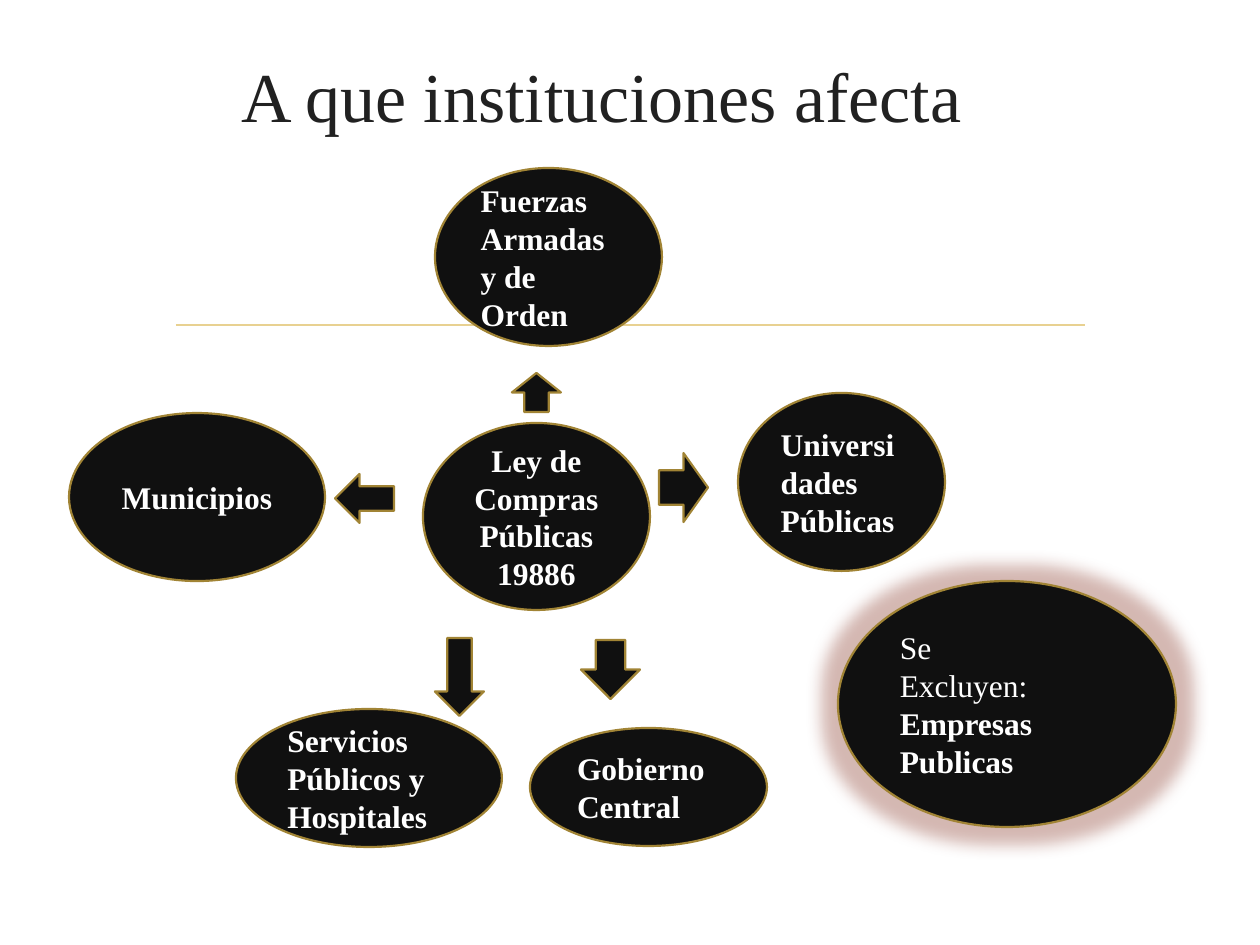
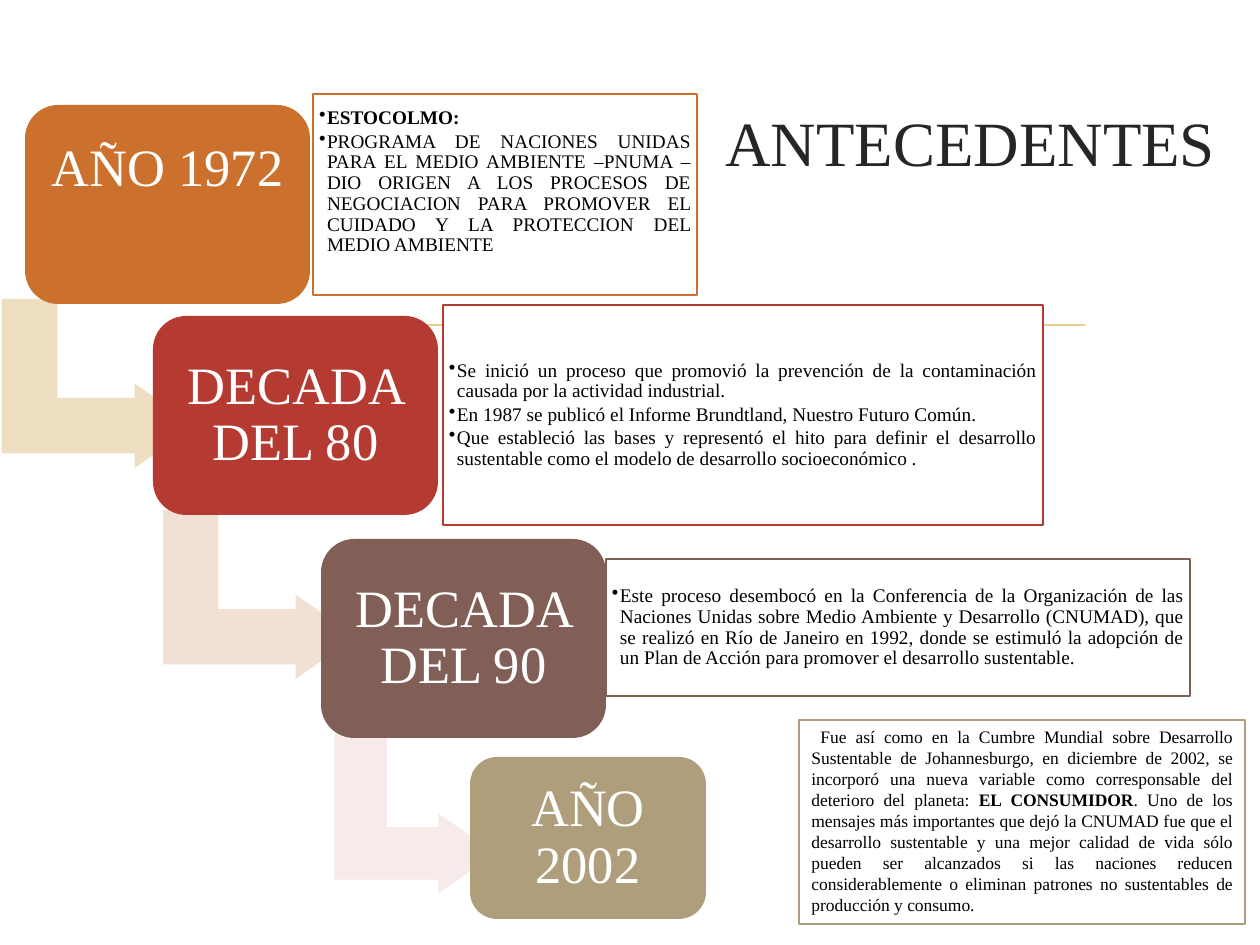
from dataclasses import dataclass

from lxml.etree import SubElement
from pptx import Presentation
from pptx.dml.color import RGBColor
from pptx.enum.shapes import MSO_CONNECTOR, MSO_SHAPE
from pptx.enum.text import MSO_ANCHOR, PP_ALIGN
from pptx.oxml.ns import qn
from pptx.util import Pt

PX = 914400 / 126  # EMU in one px


@dataclass(frozen=True)
class Theme:
    font: str = "Times New Roman"
    black: str = "000000"
    white: str = "FFFFFF"
    rule: str = "E8D191"
    node: str = "101010"
    node_line: str = "A18435"
    glow: str = "954E40"
    line_width: float = 1.25
    node_size: int = 18
    step_size: int = 30
    detail_size: int = 11
    closing_size: int = 10


T = Theme()


def add_figure(s, kind, box, fill, line=None):
    """Add a flat preset shape; box is left, top, width, height in px."""
    sp = s.shapes.add_shape(kind, *[round(v * PX) for v in box])
    sp.shadow.inherit = False
    sp.fill.solid()
    sp.fill.fore_color.rgb = RGBColor.from_string(fill)
    if line:
        sp.line.color.rgb = RGBColor.from_string(line)
        sp.line.width = Pt(T.line_width)
    else:
        sp.line.fill.background()
    return sp


def write(tf, paragraphs, size, color, align, inset=None, spacing=None,
          after=0, bullet=False):
    """Fill a text frame; each paragraph is a list of (text, bold) runs."""
    tf.word_wrap = True
    if inset is not None:
        tf.margin_left = tf.margin_right = round(inset * PX)
        tf.margin_top = tf.margin_bottom = round(inset * PX)
    for i, runs in enumerate(paragraphs):
        p = tf.paragraphs[0] if i == 0 else tf.add_paragraph()
        if bullet:
            pPr = p._p.get_or_add_pPr()
            pPr.set("marL", str(round(8 * PX)))
            pPr.set("indent", str(round(-8 * PX)))
            SubElement(pPr, qn("a:buChar"), char="•")
        p.alignment = align
        if spacing:
            p.line_spacing = spacing
            p.space_after = Pt(after)
        for text, bold in runs:
            r = p.add_run()
            r.text = text
            r.font.name = T.font
            r.font.size = Pt(size)
            r.font.bold = bold
            r.font.color.rgb = RGBColor.from_string(color)


prs = Presentation()
prs.slide_width = round(1260 * PX)
prs.slide_height = round(945 * PX)
layout = prs.slide_layouts[5]

# Titles
titles = [
    ("A que instituciones afecta", (66, 32, 1071, 126), 40, "212121", PP_ALIGN.CENTER),
    ("ANTECEDENTES", (84, 112, 1144, 59), 36, "262626", PP_ALIGN.RIGHT),
]
for text, box, size, color, align in titles:
    s = prs.slides.add_slide(layout)
    title = s.shapes.title
    title.left, title.top, title.width, title.height = [round(v * PX) for v in box]
    title.text_frame.vertical_anchor = MSO_ANCHOR.MIDDLE
    write(title.text_frame, [[(text, False)]], size, color, align)
institutions, background = prs.slides

# Gold rule, moved to the layout that both slides share
rule = institutions.shapes.add_connector(
    MSO_CONNECTOR.STRAIGHT, *[round(v * PX) for v in (176, 325, 1085, 325)])
rule.line.color.rgb = RGBColor.from_string(T.rule)
rule.line.width = Pt(T.line_width)
SubElement(rule._element.spPr, qn("a:effectLst"))
layout.shapes._spTree.append(rule._element)

# Slide 1: institutions around the law
LEFT, CENTER = PP_ALIGN.LEFT, PP_ALIGN.CENTER
nodes = [
    ((69, 413, 256, 168), CENTER, ["Municipios"]),
    ((435, 168, 227, 178), LEFT, ["Fuerzas", "Armadas y de", "Orden"]),
    ((423, 423, 227, 187), CENTER, ["Ley de", "Compras", "Públicas 19886"]),
    ((236, 709, 266, 138), LEFT, ["Servicios", "Públicos y", "Hospitales"]),
    ((738, 393, 207, 178), LEFT, ["Universidades", "Públicas"]),
    ((530, 728, 237, 118), LEFT, ["Gobierno", "Central"]),
]
for box, align, lines in nodes:
    sp = add_figure(institutions, MSO_SHAPE.OVAL, box, T.node, T.node_line)
    write(sp.text_frame, [[(line, True)] for line in lines],
          T.node_size, T.white, align)

excluded = add_figure(institutions, MSO_SHAPE.OVAL, (838, 581, 338, 246),
                      T.node, T.node_line)
write(excluded.text_frame,
      [[("Se", False)], [("Excluyen:", False)], [("Empresas Publicas", True)]],
      T.node_size, T.white, LEFT)
effects = excluded._element.spPr.find(qn("a:effectLst"))
glow = SubElement(effects, qn("a:glow"), rad=str(Pt(18)))
glow_color = SubElement(glow, qn("a:srgbClr"), val=T.glow)
SubElement(glow_color, qn("a:alpha"), val="40000")

arrows = [
    (MSO_SHAPE.DOWN_ARROW, (435, 638, 49, 78)),
    (MSO_SHAPE.DOWN_ARROW, (581, 640, 59, 59)),
    (MSO_SHAPE.RIGHT_ARROW, (659, 453, 49, 69)),
    (MSO_SHAPE.LEFT_ARROW, (335, 474, 59, 49)),
    (MSO_SHAPE.UP_ARROW, (512, 373, 49, 39)),
]
for kind, box in arrows:
    add_figure(institutions, kind, box, T.node, T.node_line)

# Slide 2: steps down the staircase: label, block, colour, arrow, detail
steps = [
    ("AÑO 1972", (25, 105, 285, 199), "CC702D",
     (14, 287, 169, 193), "EDDDC1", (313, 94, 384, 201),
     [("ESTOCOLMO:", True),
      ("PROGRAMA DE NACIONES UNIDAS PARA EL MEDIO AMBIENTE –PNUMA – DIO ORIGEN "
       "A LOS PROCESOS DE NEGOCIACION PARA PROMOVER EL CUIDADO Y LA PROTECCION "
       "DEL MEDIO AMBIENTE", False)]),
    ("DECADA DEL 80", (153, 316, 285, 199), "B53A31",
     (175, 498, 169, 193), "F1E1D5", (443, 305, 600, 220),
     [("Se inició un proceso que promovió la prevención de la contaminación "
       "causada por la actividad industrial.", False),
      ("En 1987 se publicó el Informe Brundtland, Nuestro Futuro Común.", False),
      ("Que estableció las bases y representó el hito para definir el desarrollo "
       "sustentable como el modelo de desarrollo socioeconómico .", False)]),
    ("DECADA DEL 90", (321, 539, 285, 199), "815F56",
     (335, 733, 160, 161), "F6EBE8", (606, 559, 584, 137),
     [("Este proceso desembocó en la Conferencia de la Organización de las "
       "Naciones Unidas sobre Medio Ambiente y Desarrollo (CNUMAD), que se "
       "realizó en Río de Janeiro en 1992, donde se estimuló la adopción de un "
       "Plan de Acción para promover el desarrollo sustentable.", False)]),
    ("AÑO 2002", (470, 757, 236, 162), "AE9E7C", None, None, None, None),
]
for label, box, color, arrow_box, arrow_color, detail_box, details in steps:
    if arrow_box:
        arrow = add_figure(background, MSO_SHAPE.BENT_UP_ARROW, arrow_box, arrow_color)
        arrow.rotation = 90
        for i, value in enumerate((0.328, 0.25, 0.358)):
            arrow.adjustments[i] = value
    block = add_figure(background, MSO_SHAPE.ROUNDED_RECTANGLE, box, color)
    block.adjustments[0] = 0.167
    write(block.text_frame, [[(label, False)]], T.step_size, T.white, CENTER,
          inset=15, spacing=0.9)
    if details:
        detail = add_figure(background, MSO_SHAPE.RECTANGLE, detail_box, T.white, color)
        write(detail.text_frame, [[run] for run in details], T.detail_size, T.black,
              PP_ALIGN.JUSTIFY, inset=6, spacing=0.9, after=1.5, bullet=True)
    if label == "AÑO 1972":
        for sp, top in ((block, 26), (detail, 14)):
            sp.text_frame.vertical_anchor = MSO_ANCHOR.TOP
            sp.text_frame.margin_top = round(top * PX)

closing = add_figure(background, MSO_SHAPE.RECTANGLE, (799, 720, 446, 204),
                     T.white, steps[-1][2])
tf = closing.text_frame
tf.vertical_anchor = MSO_ANCHOR.TOP
write(tf, [[
    ("Fue así como en la Cumbre Mundial sobre Desarrollo Sustentable de "
     "Johannesburgo, en diciembre de 2002, se incorporó una nueva variable como "
     "corresponsable del deterioro del planeta: ", False),
    ("EL CONSUMIDOR", True),
    (". Uno de los mensajes más importantes que dejó la CNUMAD fue que el "
     "desarrollo sustentable y una mejor calidad de vida sólo pueden ser "
     "alcanzados si las naciones reducen considerablemente o eliminan patrones "
     "no sustentables de producción y consumo.", False),
]], T.closing_size, T.black, PP_ALIGN.JUSTIFY)
tf.paragraphs[0]._p.get_or_add_pPr().set("indent", str(round(9 * PX)))

prs.save("out.pptx")
